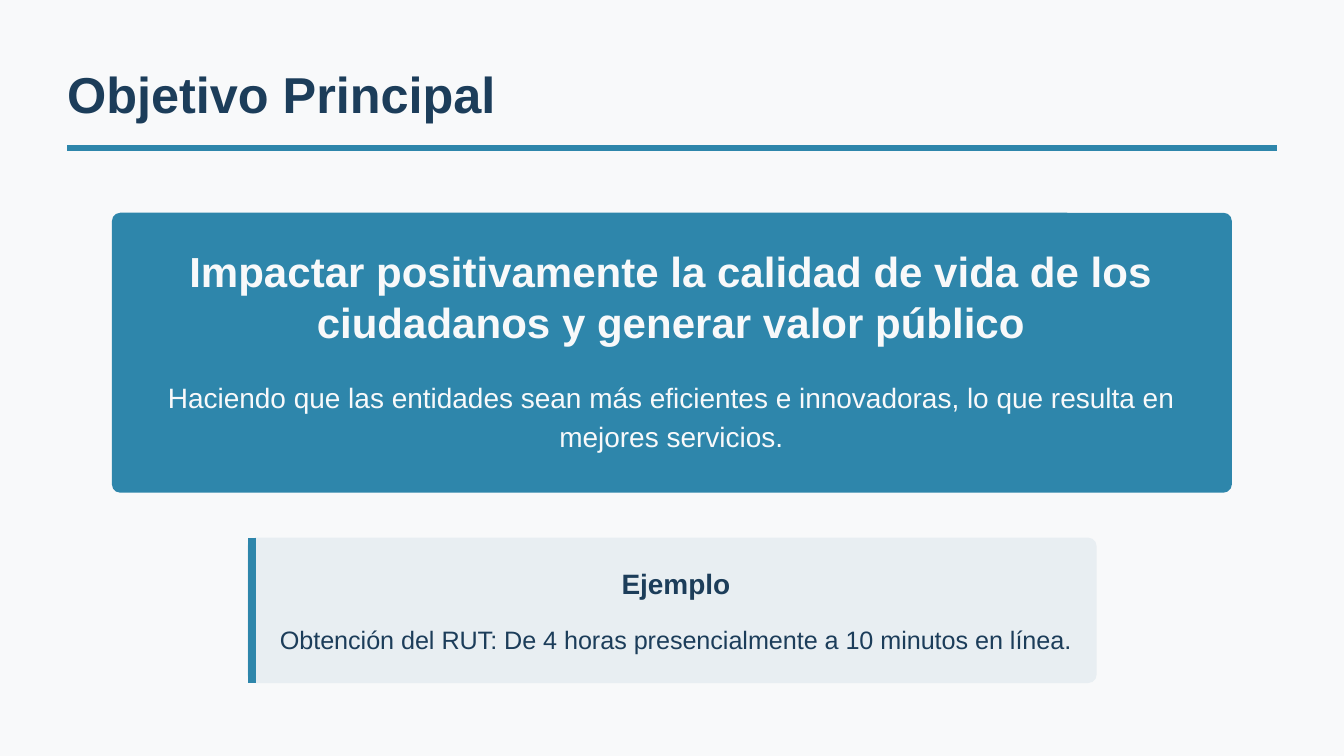
import dataclasses
import typing

import pptx
import pptx.dml.color
import pptx.enum.shapes
import pptx.enum.text
import pptx.oxml.ns
import pptx.util
from lxml import etree

COLORS = {"paper": "F8F9FA", "navy": "1C3D5A", "teal": "2E86AB", "mist": "E8EEF2"}
FONT = "Arial"
# The grid has 100 columns and 56.25 rows, so its cells are square
COLUMNS, ROWS = 100, 56.25
CELL = pptx.util.Inches(0.1)


@dataclasses.dataclass(frozen=True)
class Area:
    column: float
    row: float
    width: float
    height: float

    def lengths(self) -> list[int]:
        return [grid(value) for value in dataclasses.astuple(self)]


@dataclasses.dataclass(frozen=True)
class Card:
    area: Area
    corner: float
    color: str


@dataclasses.dataclass(frozen=True)
class Rule:
    start: tuple[float, float]
    end: tuple[float, float]
    weight: float


@dataclasses.dataclass(frozen=True)
class Label:
    area: Area
    text: str
    style: dict[str, typing.Any]


def grid(cells: float) -> int:
    return round(cells * CELL)


def rgb(name: str) -> pptx.dml.color.RGBColor:
    return pptx.dml.color.RGBColor.from_string(COLORS[name])


def write_text(box, text: str, *, size: float, leading: float, color: str = "navy",
               bold: bool = False, centered: bool = True, space: float = 0,
               bottom: float = 0) -> None:
    frame = box.text_frame
    frame.word_wrap = True
    frame.auto_size = pptx.enum.text.MSO_AUTO_SIZE.NONE
    frame.vertical_anchor = pptx.enum.text.MSO_ANCHOR.TOP
    frame.margin_left = frame.margin_right = frame.margin_top = 0
    frame.margin_bottom = grid(bottom)
    para = frame.paragraphs[0]
    align = pptx.enum.text.PP_ALIGN
    para.alignment = align.CENTER if centered else align.LEFT
    para.line_spacing = pptx.util.Pt(leading)
    para.space_before = para.space_after = pptx.util.Pt(space)
    span = para.add_run()
    span.text = text
    span.font.name = FONT
    span.font.size = pptx.util.Pt(size)
    span.font.bold = bold
    span.font.color.rgb = rgb(color)


def draw_card(page, card: Card) -> None:
    kind = pptx.enum.shapes.MSO_SHAPE.ROUNDED_RECTANGLE
    shape = page.shapes.add_shape(kind, *card.area.lengths())
    shape.adjustments[0] = card.corner
    shape.shadow.inherit = False
    shape.fill.solid()
    shape.fill.fore_color.rgb = rgb(card.color)
    shape.line.fill.background()


def draw_rule(page, rule: Rule) -> None:
    kind = pptx.enum.shapes.MSO_CONNECTOR.STRAIGHT
    ends = [grid(value) for value in rule.start + rule.end]
    line = page.shapes.add_connector(kind, *ends)
    line.line.color.rgb = rgb("teal")
    line.line.width = pptx.util.Pt(rule.weight)
    etree.SubElement(line._element.spPr, pptx.oxml.ns.qn("a:effectLst"))


def draw_label(page, label: Label) -> None:
    box = page.shapes.add_textbox(*label.area.lengths())
    write_text(box, label.text, **label.style)


def draw_title(page, area: Area, text: str) -> None:
    title = page.shapes.title
    title.left, title.top, title.width, title.height = area.lengths()
    write_text(title, text, size=27, leading=30, bold=True, centered=False)


PARTS = [
    # Line under the title
    Rule((5, 11), (95, 11), 3),
    # Main goal
    Card(Area(8.33, 15.83, 83.33, 20.83), 0.03, "teal"),
    Label(Area(10, 18.3, 79.9, 9.2),
          "Impactar positivamente la calidad de vida de los ciudadanos y generar valor público",
          dict(size=22.5, leading=27, color="paper", bold=True, bottom=1.7)),
    Label(Area(10, 27.9, 79.9, 5.8),
          "Haciendo que las entidades sean más eficientes e innovadoras, "
          "lo que resulta en mejores servicios.",
          dict(size=15, leading=21, color="paper", space=3)),
    # Example with its accent bar
    Card(Area(18.4, 40, 63.2, 10.83), 0.06, "mist"),
    Rule((18.74, 40), (18.74, 50.83), 4.5),
    Label(Area(20.1, 41.7, 60.4, 3.8), "Ejemplo",
          dict(size=15, leading=21, bold=True, bottom=0.8)),
    Label(Area(20.1, 45.8, 60.4, 2.9),
          "Obtención del RUT: De 4 horas presencialmente a 10 minutos en línea.",
          dict(size=13.5, leading=21, space=3)),
]
DRAWERS = {Card: draw_card, Rule: draw_rule, Label: draw_label}


def main() -> None:
    deck = pptx.Presentation()
    deck.slide_width, deck.slide_height = grid(COLUMNS), grid(ROWS)
    page = deck.slides.add_slide(deck.slide_layouts.get_by_name("Title Only"))
    page.background.fill.solid()
    page.background.fill.fore_color.rgb = rgb("paper")
    draw_title(page, Area(5, 5, 46, 4.2), "Objetivo Principal")
    for part in PARTS:
        DRAWERS[type(part)](page, part)
    deck.save("out.pptx")


if __name__ == "__main__":
    main()
